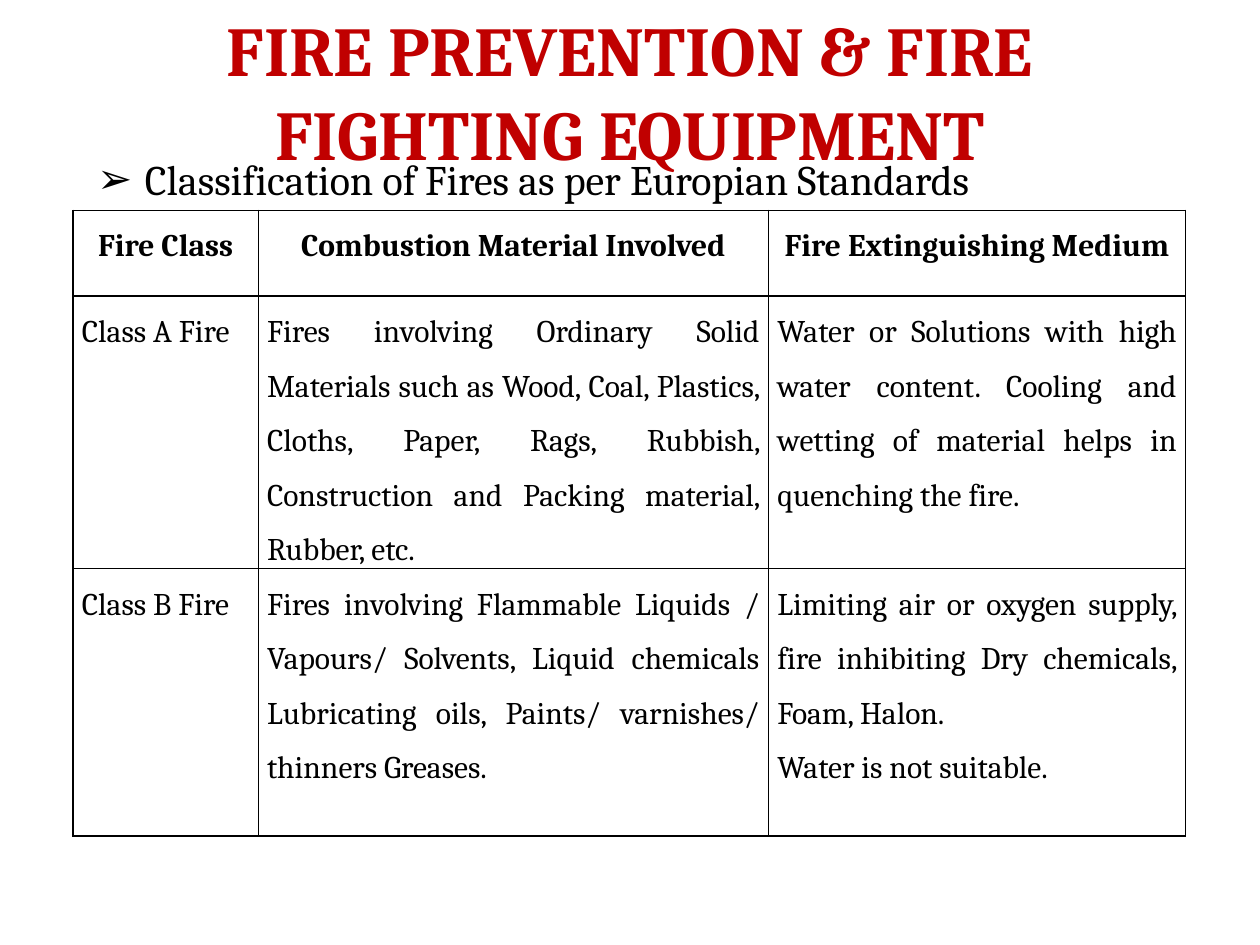
from pptx import Presentation
from pptx.dml.color import RGBColor
from pptx.enum.text import MSO_ANCHOR as Anchor, MSO_AUTO_SIZE as AutoSize, PP_ALIGN as Align
from pptx.oxml.ns import qn
from pptx.util import Inches, Pt
from lxml.etree import SubElement

FONT = "Cambria"
BLACK, WHITE, RED = "000000", "FFFFFF", "C00000"
COLUMN_WIDTHS = [1.47, 4.05, 3.31]
ROW_HEIGHTS = [0.68, 2.12, 2.12]
FIRE_CLASSES = [
    ["Fire Class", "Combustion Material Involved", "Fire Extinguishing Medium"],
    [
        "Class A Fire",
        "Fires involving Ordinary Solid Materials such as Wood, Coal, Plastics, Cloths, "
        "Paper, Rags, Rubbish, Construction and Packing material, Rubber, etc.",
        "Water or Solutions with high water content. Cooling and wetting of material "
        "helps in quenching the fire.",
    ],
    [
        "Class B Fire",
        "Fires involving Flammable Liquids / Vapours/ Solvents, Liquid chemicals "
        "Lubricating oils, Paints/ varnishes/ thinners Greases.",
        "Limiting air or oxygen supply, fire inhibiting Dry chemicals, Foam, Halon.\n"
        "Water is not suitable.",
    ],
]


def color(value):
    return RGBColor.from_string(value)


def style_paragraph(para, size, align, shade=BLACK, bold=False):
    para.alignment = align
    font = para.font
    font.name, font.size, font.bold = FONT, Pt(size), bold
    font.color.rgb = color(shade)


def place(shape, left, top, width, height):
    shape.left, shape.top = Inches(left), Inches(top)
    shape.width, shape.height = Inches(width), Inches(height)


def add_title(page, box):
    title = page.shapes.title
    place(title, *box)
    frame = title.text_frame
    frame.text = "FIRE PREVENTION & FIRE FIGHTING EQUIPMENT"
    frame.word_wrap = True
    frame.auto_size = AutoSize.NONE
    frame.vertical_anchor = Anchor.MIDDLE
    frame.margin_bottom = Inches(0.47)
    style_paragraph(frame.paragraphs[0], 40, Align.CENTER, RED, True)


def add_subtitle(page, box):
    body = page.placeholders[1]
    place(body, *box)
    frame = body.text_frame
    frame.text = "Classification of Fires as per Europian Standards"
    frame.word_wrap = True
    frame.auto_size = AutoSize.NONE
    para = frame.paragraphs[0]
    properties = para._p.get_or_add_pPr()
    properties.set("marL", str(Inches(0.38)))
    properties.set("indent", str(Inches(-0.38)))
    SubElement(properties, qn("a:buChar"), char="➢")
    para.space_before = Pt(0)
    style_paragraph(para, 24, Align.JUSTIFY)


def add_borders(cell):
    properties = cell._tc.get_or_add_tcPr()
    for side in ("lnL", "lnR", "lnT", "lnB"):
        line = SubElement(properties, qn(f"a:{side}"), w=str(Pt(1)))
        fill = SubElement(line, qn("a:solidFill"))
        SubElement(fill, qn("a:srgbClr"), val=BLACK)


def fill_cell(cell, text, is_header):
    add_borders(cell)
    cell.fill.solid()
    cell.fill.fore_color.rgb = color(WHITE)
    cell.margin_left = cell.margin_right = Inches(0.07)
    cell.margin_top = cell.margin_bottom = 0
    cell.text = text
    for para in cell.text_frame.paragraphs:
        para.line_spacing = 1.5
        align = Align.CENTER if is_header else Align.JUSTIFY
        style_paragraph(para, 18, align, bold=is_header)


def add_fire_table(page, box):
    rows, columns = len(ROW_HEIGHTS), len(COLUMN_WIDTHS)
    table = page.shapes.add_table(rows, columns, *map(Inches, box)).table
    for column, width in zip(table.columns, COLUMN_WIDTHS):
        column.width = Inches(width)
    for row, height in zip(table.rows, ROW_HEIGHTS):
        row.height = Inches(height)
    for row_index, texts in enumerate(FIRE_CLASSES):
        for column_index, text in enumerate(texts):
            fill_cell(table.cell(row_index, column_index), text, row_index == 0)


def main():
    deck = Presentation()
    deck.slide_width, deck.slide_height = Inches(10), Inches(7.5)
    page = deck.slides.add_slide(deck.slide_layouts[1])
    add_title(page, (0.5, 0.3, 9, 1.25))
    add_subtitle(page, (0.67, 1.17, 8.1, 0.5))
    add_fire_table(page, (0.58, 1.67, 8.83, 4.92))
    deck.save("out.pptx")


if __name__ == "__main__":
    main()
